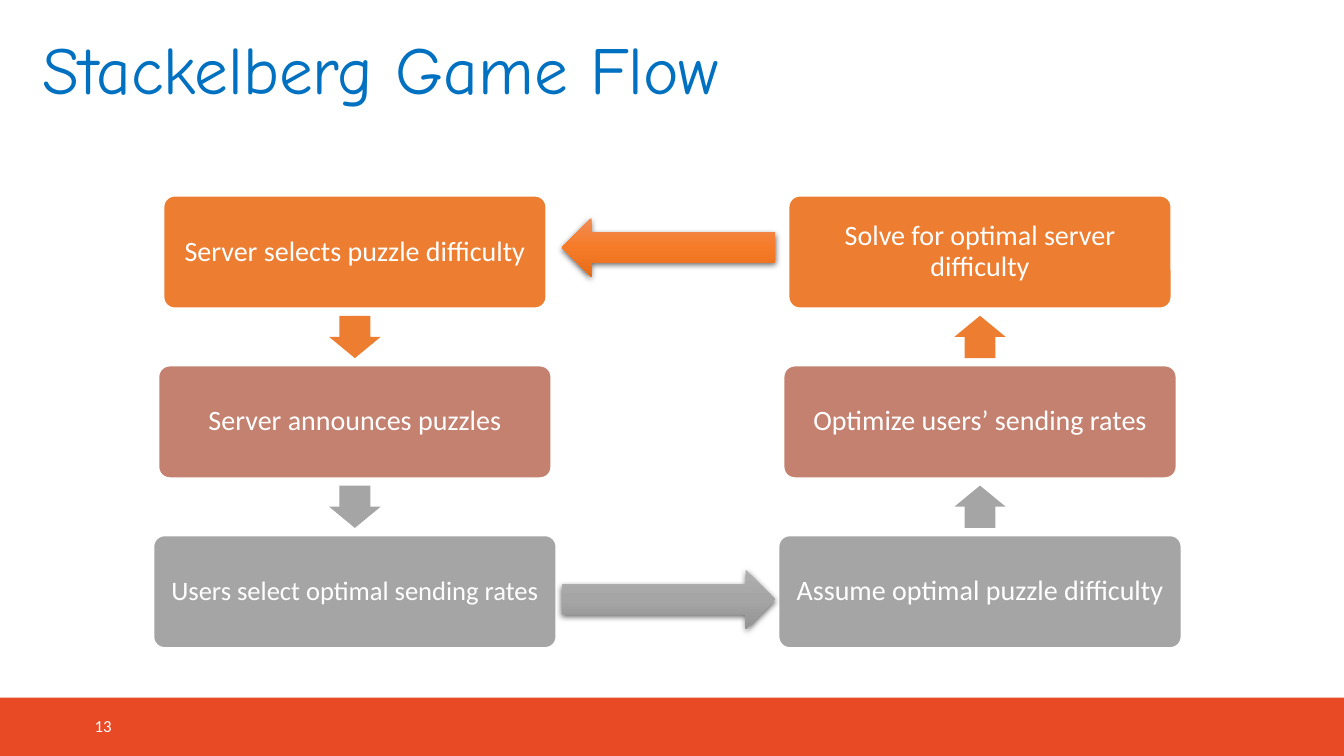
"""Builds the Stackelberg game flow slide."""
import copy
from dataclasses import dataclass

import lxml.etree
import pptx
import pptx.dml.color
import pptx.enum.shapes
import pptx.enum.text
import pptx.oxml
import pptx.oxml.ns
import pptx.shapes.autoshape
import pptx.slide
import pptx.text.text
import pptx.util

Inches = pptx.util.Inches
Shape = pptx.enum.shapes.MSO_SHAPE
Align = pptx.enum.text.PP_ALIGN


@dataclass(frozen=True)
class Theme:
    title_font: str = "Comic Neue"
    body_font: str = "Calibri"
    title_size: float = 48
    step_size: float = 20
    tight_step_size: float = 19
    number_size: float = 12
    title: str = "0070C0"
    white: str = "FFFFFF"
    footer: str = "E84A26"
    orange: str = "ED7D31"
    rose: str = "C48170"
    grey: str = "A5A5A5"
    orange_blend: tuple[str, ...] = ("F18C57", "F67B28", "E56C19")
    grey_blend: tuple[str, ...] = ("AFAFAF", "A5A5A5", "939393")


@dataclass(frozen=True)
class Step:
    text: str
    size: float


@dataclass(frozen=True)
class Column:
    center: float
    arrow: Shape
    steps: tuple[Step, ...]


@dataclass(frozen=True)
class Link:
    top: float
    kind: Shape
    blend: tuple[str, ...]


THEME = Theme()
ROW_COLORS = (THEME.orange, THEME.rose, THEME.grey)
GAP_COLORS = (THEME.orange, THEME.grey)
FIRST_TOP, ROW_PITCH, STEP_HEIGHT = 1.94, 1.685, 1.12
FIRST_WIDTH, WIDTH_GROWTH = 3.8, 0.1
ARROW_WIDTH, ARROW_HEIGHT = 0.51, 0.42
LINK_LEFT, LINK_WIDTH, LINK_HEIGHT = 5.57, 2.12, 0.59

COLUMNS = (
    Column(3.52, Shape.DOWN_ARROW, (
        Step("Server selects puzzle difficulty", THEME.step_size),
        Step("Server announces puzzles", THEME.step_size),
        Step("Users select optimal sending rates", THEME.tight_step_size),
    )),
    Column(9.72, Shape.UP_ARROW, (
        Step("Solve for optimal server difficulty", THEME.step_size),
        Step("Optimize users’ sending rates", THEME.step_size),
        Step("Assume optimal puzzle difficulty", THEME.step_size),
    )),
)
LINKS = (
    Link(5.65, Shape.RIGHT_ARROW, THEME.grey_blend),
    Link(2.16, Shape.LEFT_ARROW, THEME.orange_blend),
)
SHADOW = (
    f'<a:outerShdw {pptx.oxml.ns.nsdecls("a")} blurRad="57150" dist="19050" '
    'dir="5400000" algn="ctr" rotWithShape="0">'
    '<a:srgbClr val="000000"><a:alpha val="63000"/></a:srgbClr></a:outerShdw>'
)


def rgb(color: str) -> pptx.dml.color.RGBColor:
    return pptx.dml.color.RGBColor.from_string(color)


def add_block(page: pptx.slide.Slide, kind: Shape, left: float, top: float,
              width: float, height: float, color: str) -> pptx.shapes.autoshape.Shape:
    block = page.shapes.add_shape(kind, Inches(left), Inches(top), Inches(width), Inches(height))
    block.shadow.inherit = False
    block.fill.solid()
    block.fill.fore_color.rgb = rgb(color)
    block.line.fill.background()
    return block


def write(frame: pptx.text.text.TextFrame, text: str, font: str, size: float,
          color: str, align: Align, spacing: float = 1.0) -> None:
    frame.text = text
    frame.word_wrap = True
    frame.vertical_anchor = pptx.enum.text.MSO_ANCHOR.MIDDLE
    para = frame.paragraphs[0]
    para.alignment = align
    para.line_spacing = spacing
    span = para.runs[0]
    span.font.name = font
    span.font.size = pptx.util.Pt(size)
    span.font.color.rgb = rgb(color)


def add_title(page: pptx.slide.Slide) -> None:
    title = page.shapes.title
    title.left, title.top = Inches(0.32), Inches(0.24)
    title.width, title.height = Inches(12.7), Inches(0.97)
    write(title.text_frame, "Stackelberg Game Flow", THEME.title_font,
          THEME.title_size, THEME.title, Align.LEFT, 0.9)


def add_step(page: pptx.slide.Slide, step: Step, center: float, row: int) -> None:
    width = FIRST_WIDTH + row * WIDTH_GROWTH
    box = add_block(page, Shape.ROUNDED_RECTANGLE, center - width / 2,
                    FIRST_TOP + row * ROW_PITCH, width, STEP_HEIGHT, ROW_COLORS[row])
    box.adjustments[0] = 0.1
    box.line.color.rgb = rgb(THEME.white)
    box.line.width = pptx.util.Pt(1.5)
    frame = box.text_frame
    frame.margin_left = frame.margin_right = Inches(0.08)
    frame.margin_top = frame.margin_bottom = Inches(0.08)
    write(frame, step.text, THEME.body_font, step.size, THEME.white, Align.CENTER, 0.9)


def add_column(page: pptx.slide.Slide, column: Column) -> None:
    for row, step in enumerate(column.steps):
        add_step(page, step, column.center, row)
    for row, color in enumerate(GAP_COLORS):
        middle = FIRST_TOP + row * ROW_PITCH + (STEP_HEIGHT + ROW_PITCH) / 2
        arrow = add_block(page, column.arrow, column.center - ARROW_WIDTH / 2,
                          middle - ARROW_HEIGHT / 2, ARROW_WIDTH, ARROW_HEIGHT, color)
        arrow.adjustments[0] = 0.6
        arrow.adjustments[1] = 0.5


def add_link(page: pptx.slide.Slide, link: Link) -> None:
    arrow = add_block(page, link.kind, LINK_LEFT, link.top, LINK_WIDTH, LINK_HEIGHT,
                      link.blend[1])
    arrow.fill.gradient()
    arrow.fill.gradient_angle = 270
    properties = arrow.element.spPr
    stop_list = properties.find(".//" + pptx.oxml.ns.qn("a:gsLst"))
    stop_list.insert(1, copy.deepcopy(stop_list[0]))
    for index, (stop, color) in enumerate(zip(arrow.fill.gradient_stops, link.blend)):
        stop.position = index / 2
        stop.color.rgb = rgb(color)
    effects = properties.find(pptx.oxml.ns.qn("a:effectLst"))
    effects.append(pptx.oxml.parse_xml(SHADOW))


def main() -> None:
    deck = pptx.Presentation()
    deck.slide_width, deck.slide_height = Inches(13.33), Inches(7.5)
    page = deck.slides.add_slide(deck.slide_layouts[5])
    add_block(page, Shape.RECTANGLE, 0, 6.92, 13.33, 0.58, THEME.footer)
    add_title(page)
    for column in COLUMNS:
        add_column(page, column)
    for link in LINKS:
        add_link(page, link)
    number = page.shapes.add_textbox(Inches(0.84), Inches(7), Inches(3), Inches(0.4))
    write(number.text_frame, "13", THEME.body_font, THEME.number_size, THEME.white, Align.LEFT)
    deck.save("out.pptx")


if __name__ == "__main__":
    main()
